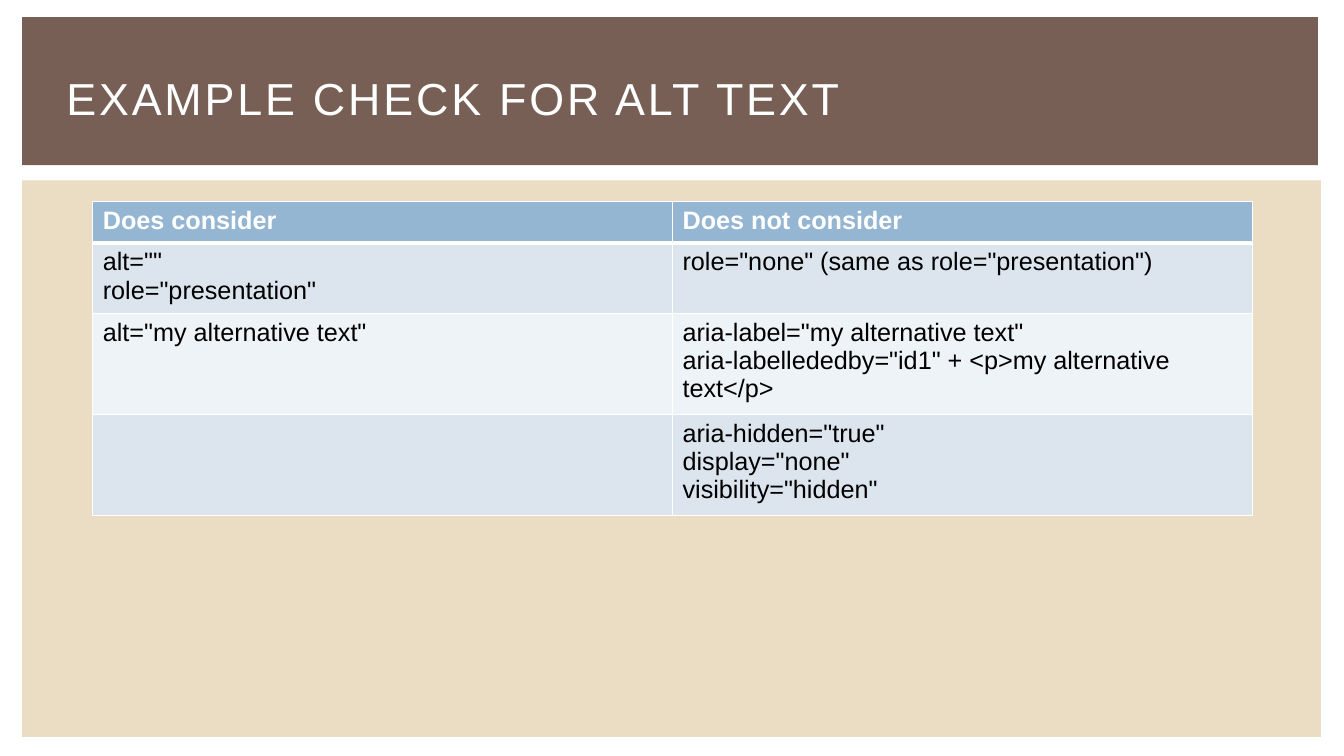
import pptx
import pptx.dml.color
import pptx.enum.shapes
import pptx.enum.text
import pptx.oxml.ns
import pptx.util
import lxml.etree

PX = 9144  # EMU per px, 100 px to the inch
FONT = "Arial"
COLORS = {
    "band": "775F55",
    "panel": "EBDDC3",
    "header": "94B6D2",
    "odd_row": "DCE5EE",
    "even_row": "EEF3F7",
    "white": "FFFFFF",
    "black": "000000",
}
ROWS = [
    ("Does consider", "Does not consider"),
    ('alt=""\vrole="presentation"', 'role="none" (same as role="presentation")'),
    ('alt="my alternative text"',
     'aria-label="my alternative text"\n'
     'aria-labellededby="id1" + <p>my alternative text</p>'),
    ("", 'aria-hidden="true"\ndisplay="none"\nvisibility="hidden"'),
]
ROW_HEIGHTS = [41, 66, 94, 94]


def px(*lengths):
    return [length * PX for length in lengths]


def rgb(name):
    return pptx.dml.color.RGBColor.from_string(COLORS[name])


def format_runs(frame, size, color, bold=False, spacing=None):
    for para in frame.paragraphs:
        for run in para.runs:
            run.font.name = FONT
            run.font.size = pptx.util.Pt(size)
            run.font.bold = bold
            run.font.color.rgb = rgb(color)
            if spacing:
                run.font._element.set("spc", str(spacing * 100))


def add_block(page, bounds, color):
    block = page.shapes.add_shape(
        pptx.enum.shapes.MSO_SHAPE.RECTANGLE, *px(*bounds))
    block.shadow.inherit = False
    block.fill.solid()
    block.fill.fore_color.rgb = rgb(color)
    block.line.fill.background()


def add_title(page, bounds, text):
    box = page.shapes.add_textbox(*px(*bounds))
    frame = box.text_frame
    frame.word_wrap = True
    frame.vertical_anchor = pptx.enum.text.MSO_ANCHOR.MIDDLE
    frame.text = text
    format_runs(frame, 32, "white", spacing=2)


def set_border(cell, side, points):
    properties = cell._tc.get_or_add_tcPr()
    qualified = pptx.oxml.ns.qn
    line = lxml.etree.SubElement(properties, qualified(f"a:ln{side}"))
    line.set("w", str(pptx.util.Pt(points)))
    fill = lxml.etree.SubElement(line, qualified("a:solidFill"))
    lxml.etree.SubElement(fill, qualified("a:srgbClr")).set("val", COLORS["white"])


def fill_cell(cell, text, row):
    # Borders come before the fill; the rule under the header is thicker
    thickness = {"L": 1, "R": 1,
                 "T": 3 if row == 1 else 1,
                 "B": 3 if row == 0 else 1}
    for side, points in thickness.items():
        set_border(cell, side, points)
    is_header = row == 0
    band = "header" if is_header else "odd_row" if row % 2 else "even_row"
    cell.fill.solid()
    cell.fill.fore_color.rgb = rgb(band)
    cell.text_frame.text = text
    format_runs(cell.text_frame, 18, "white" if is_header else "black", is_header)


def add_check_table(page, left, top, width):
    frame = page.shapes.add_table(
        len(ROWS), len(ROWS[0]), *px(left, top, width, sum(ROW_HEIGHTS)))
    table = frame.table
    for row, (texts, height) in enumerate(zip(ROWS, ROW_HEIGHTS)):
        table.rows[row].height = height * PX
        for column, text in enumerate(texts):
            fill_cell(table.cell(row, column), text, row)


def main():
    deck = pptx.Presentation()
    deck.slide_width, deck.slide_height = px(1333, 750)
    page = deck.slides.add_slide(deck.slide_layouts[6])

    # Title band and content panel
    add_block(page, (22, 17, 1285, 147), "band")
    add_block(page, (22, 179, 1288, 552), "panel")
    add_title(page, (56, 39, 1222, 115), "EXAMPLE CHECK FOR ALT TEXT")

    # Comparison of what the check covers
    add_check_table(page, 92, 200, 1150)

    deck.save("out.pptx")


if __name__ == "__main__":
    main()
